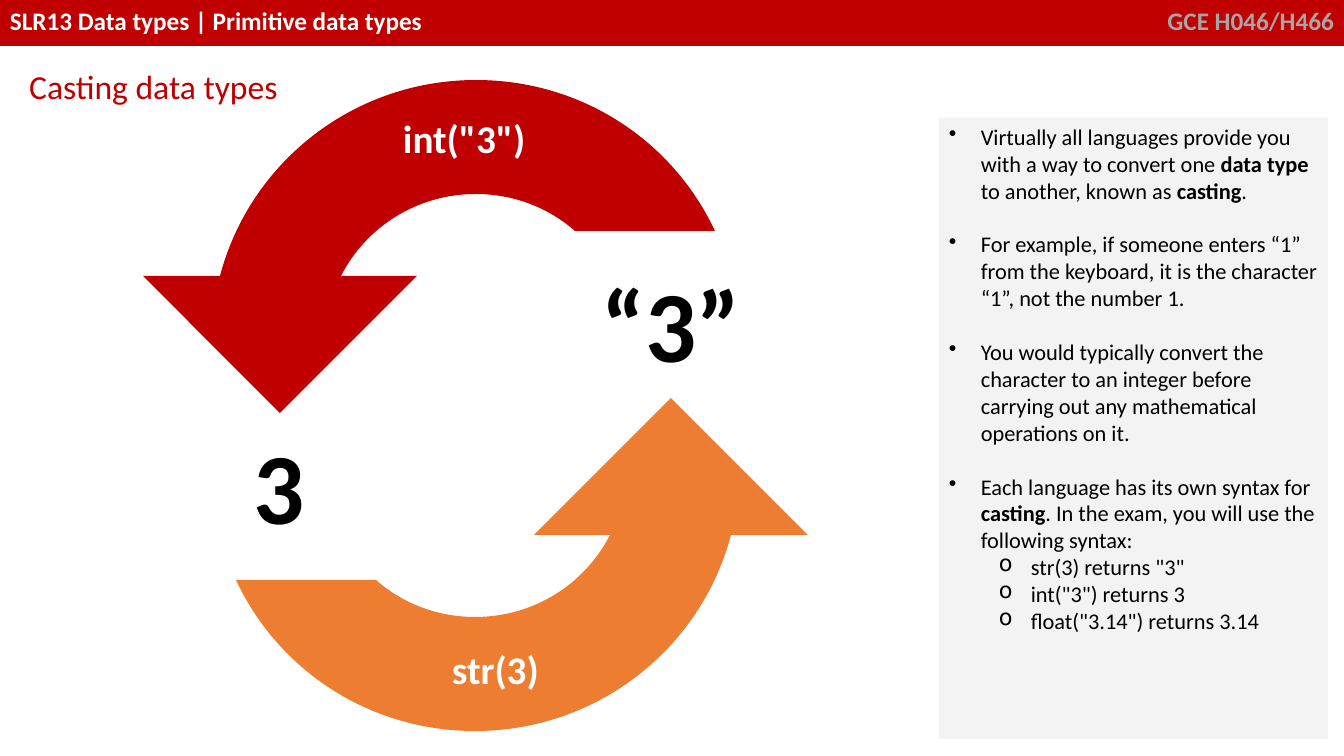
"""Builds the slide on casting data types."""
from lxml import etree
from pptx import Presentation
from pptx.dml.color import RGBColor
from pptx.enum.shapes import MSO_SHAPE
from pptx.enum.text import MSO_ANCHOR, MSO_AUTO_SIZE, PP_ALIGN
from pptx.oxml.ns import qn
from pptx.util import Emu, Pt

RECTANGLE = MSO_SHAPE.RECTANGLE
TOP = MSO_ANCHOR.TOP
LEFT, RIGHT = PP_ALIGN.LEFT, PP_ALIGN.RIGHT
NO_FIT, GROW = MSO_AUTO_SIZE.NONE, MSO_AUTO_SIZE.SHAPE_TO_FIT_TEXT

EMU_PER_PX = 914400 / 100.8
FONT = "Calibri"
RED, ORANGE, WHITE, BLACK = "C00000", "ED7D31", "FFFFFF", "000000"
PALE, GREY = "F2F2F2", "A6A6A6"

HEADERS = [
    ("GCE H046/H466", (1116, 0, 228, 46), GREY, RIGHT),
    ("SLR13 Data types | Primitive data types", (0, 0, 1163, 46), WHITE, LEFT),
]
TITLE, TITLE_BOX = "Casting data types", (19, 58, 423, 52)
PANEL_BOX = (939, 118, 389, 621)
NOTES = [
    (0, "Virtually all languages provide you with a way to convert one "
        "**data type** to another, known as **casting**."),
    (0, "For example, if someone enters “1” from the keyboard, it is the "
        "character “1”, not the number 1."),
    (0, "You would typically convert the character to an integer before "
        "carrying out any mathematical operations on it."),
    (0, "Each language has its own syntax for **casting**. In the exam, you "
        "will use the following syntax:"),
    (1, 'str(3) returns "3"'),
    (1, 'int("3") returns 3'),
    (1, 'float("3.14") returns 3.14'),
]
NOTE_SIZE, NOTE_GAP = 16, 19.3
BULLETS, BULLET_MARGINS, BULLET_HANG = "•o", (32, 82), 32
LABELS = [
    ("“3”", (592, 257, 160, 132), 72, BLACK),
    ("3", (244, 419, 72, 132), 72, BLACK),
    ("str(3)", (442, 640, 109, 57), 28, WHITE),
    ('int("3")', (393, 109, 144, 57), 28, WHITE),
]
CENTRE = (475.5, 405.5)
ARROW_START = (280, 413)
ARROW_STEPS = [
    [(417, 276)],
    [(341, 276)],
    [(366, 227), (417, 194), (476, 194)],
    [(514, 194), (549, 208), (575, 231)],
    [(715, 231)],
    [(673, 141), (582, 80), (476, 80)],
    [(354, 80), (250, 162), (220, 276)],
    [(143, 276)],
]


def px(length):
    """Turn px into EMU."""
    return Emu(round(length * EMU_PER_PX))


def color(value):
    """Turn a hex string into a colour."""
    return RGBColor.from_string(value)


def paint(shape, fill, opacity=100):
    """Give a shape a plain fill without line."""
    shape.fill.solid()
    shape.fill.fore_color.rgb = color(fill)
    if opacity < 100:
        solid = shape.fill._xPr.find(qn("a:solidFill"))
        etree.SubElement(solid[0], qn("a:alpha"), val=str(opacity * 1000))
    shape.line.fill.background()


def place(shape, box):
    """Move a shape to a box in px."""
    shape.left, shape.top, shape.width, shape.height = map(px, box)


def write(paragraph, text, size, ink, bold=False, align=LEFT):
    """Write text in which ** turns bold on and off."""
    paragraph.alignment = align
    paragraph.font.size = Pt(size)
    for index, part in enumerate(text.split("**")):
        run = paragraph.add_run()
        run.text = part
        run.font.name = FONT
        run.font.size = Pt(size)
        run.font.bold = bold or index % 2 == 1
        run.font.color.rgb = color(ink)
    etree.SubElement(paragraph._p, qn("a:endParaRPr"), sz=str(size * 100))


def set_frame(shape, wrap=True, fit=NO_FIT):
    """Set up a text frame and return it."""
    frame = shape.text_frame
    frame.auto_size, frame.word_wrap, frame.vertical_anchor = fit, wrap, TOP
    return frame


def add_block(slide, box, fill, opacity=100):
    """Add a filled rectangle."""
    shape = slide.shapes.add_shape(RECTANGLE, *map(px, box))
    shape.shadow.inherit = False
    paint(shape, fill, opacity)
    return shape


def set_bullet(paragraph, level):
    """Indent a paragraph and give it the bullet of its level."""
    paragraph.level = level
    properties = paragraph._p.get_or_add_pPr()
    properties.set("marL", str(px(BULLET_MARGINS[level])))
    properties.set("indent", str(-px(BULLET_HANG)))
    etree.SubElement(properties, qn("a:buChar"), char=BULLETS[level])


def turn(point):
    """Turn a point half way round the centre of the cycle."""
    return tuple(2 * middle - value for middle, value in zip(CENTRE, point))


def add_arrow(slide, start, steps, fill):
    """Draw an outline in which steps of three points are curves."""
    builder = slide.shapes.build_freeform(*map(px, start))
    builder.add_line_segments(
        [tuple(map(px, point)) for step in steps for point in step], close=True)
    shape = builder.convert_to_shape()
    shape.shadow.inherit = False
    paint(shape, fill)
    lines = iter(list(shape._element.iter(qn("a:lnTo"))))
    for step in steps:
        segments = [next(lines) for _ in step]
        if len(step) == 3:
            curve = etree.Element(qn("a:cubicBezTo"))
            segments[0].addprevious(curve)
            for segment in segments:
                curve.append(segment[0])
                segment.getparent().remove(segment)


def main():
    """Build and save the slide."""
    presentation = Presentation()
    presentation.slide_width, presentation.slide_height = px(1344), px(756)
    slide = presentation.slides.add_slide(presentation.slide_layouts[5])

    title = slide.shapes.title
    place(title, TITLE_BOX)
    paint(title, WHITE, 70)
    heading = set_frame(title).paragraphs[0]
    heading.line_spacing = 1.07
    write(heading, TITLE, 24, RED)

    for text, box, ink, align in HEADERS:
        frame = set_frame(add_block(slide, box, RED))
        write(frame.paragraphs[0], text, 18, ink, bold=True, align=align)

    frame = set_frame(add_block(slide, PANEL_BOX, PALE, 90))
    for index, (level, text) in enumerate(NOTES):
        paragraph = frame.add_paragraph() if index else frame.paragraphs[0]
        set_bullet(paragraph, level)
        paragraph.space_before = Pt(NOTE_GAP if index and level == 0 else 0)
        write(paragraph, text, NOTE_SIZE, BLACK)

    turned_steps = [[turn(point) for point in step] for step in ARROW_STEPS]
    add_arrow(slide, ARROW_START, ARROW_STEPS, RED)
    add_arrow(slide, turn(ARROW_START), turned_steps, ORANGE)

    for text, box, size, ink in LABELS:
        label = slide.shapes.add_textbox(*map(px, box))
        frame = set_frame(label, wrap=False, fit=GROW)
        write(frame.paragraphs[0], text, size, ink, bold=True)

    presentation.save("out.pptx")


if __name__ == "__main__":
    main()
